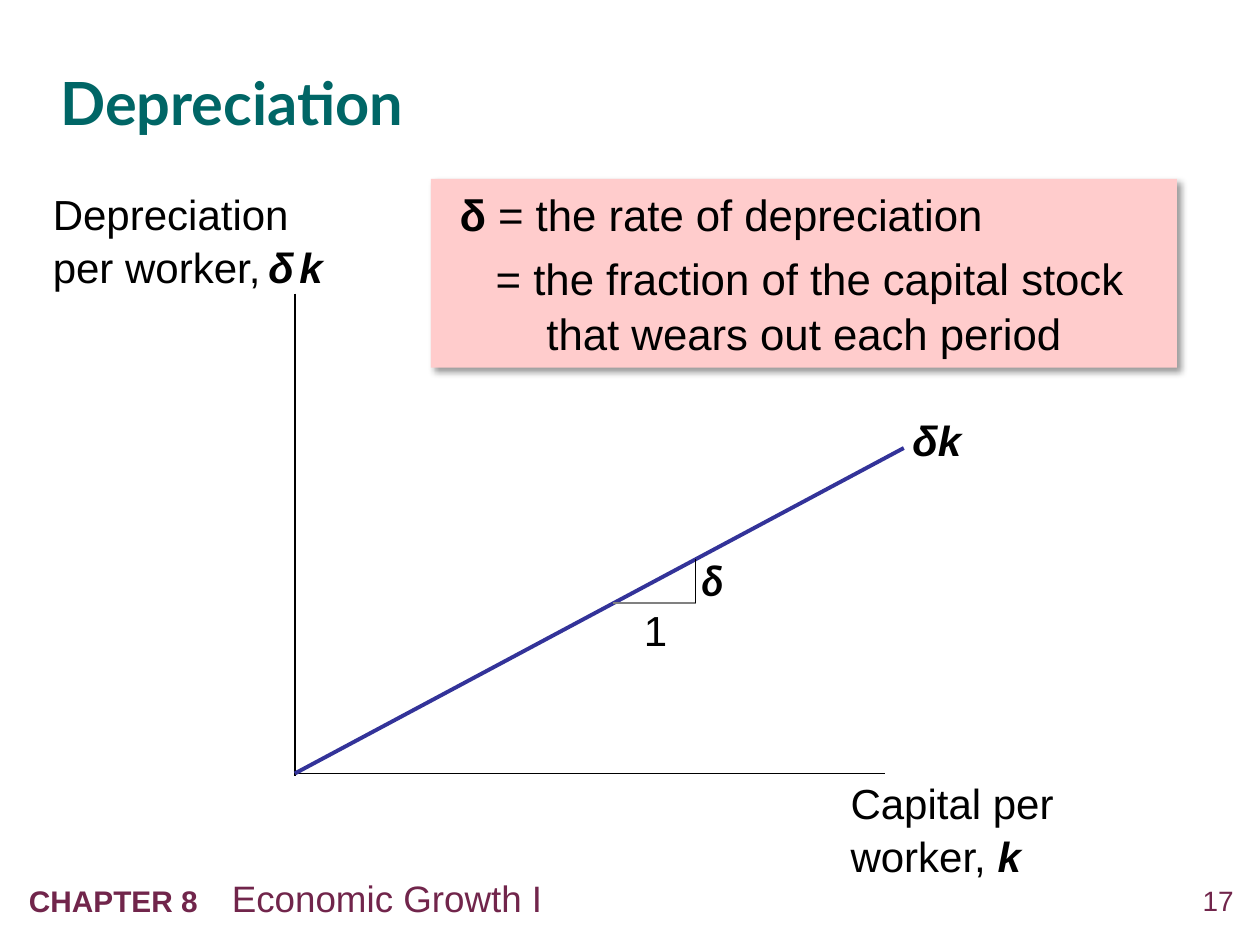
"""Build the slide on depreciation per worker as a line through the origin."""
import pptx
import pptx.util
import pptx.oxml
import pptx.oxml.ns
import pptx.dml.color
import pptx.enum.text
import pptx.enum.shapes

Pt = pptx.util.Pt
RGB = pptx.dml.color.RGBColor
ANCHOR = pptx.enum.text.MSO_ANCHOR
ALIGN = pptx.enum.text.PP_ALIGN
BLACK = RGB(0x00, 0x00, 0x00)
PLUM = RGB(0x71, 0x25, 0x4B)
TEAL = RGB(0x00, 0x66, 0x66)
BLUE = RGB(0x33, 0x33, 0x99)
GRAY = RGB(0x80, 0x80, 0x80)
PINK = RGB(0xFF, 0xCC, 0xCC)
SPACE = 'xmlns:a="http://schemas.openxmlformats.org/drawingml/2006/main"'
BOLD = {"bold": True}
SLANT = {"bold": True, "italic": True}


def write(para, runs, size, color=BLACK):
    for text, extra in runs:
        run = para.add_run()
        run.text = text
        run.font.color.rgb = color
        look = {"name": "Arial", "size": Pt(size), "bold": False, "italic": False}
        for key, value in {**look, **extra}.items():
            setattr(run.font, key, value)


def place(frame, anchor, inset=(0, 0)):
    side, edge = map(Pt, inset)
    look = {"word_wrap": True, "vertical_anchor": anchor, "margin_left": side,
            "margin_right": side, "margin_top": edge, "margin_bottom": edge}
    for key, value in look.items():
        setattr(frame, key, value)
    return frame.paragraphs[0]


deck = pptx.Presentation()
deck.slide_width, deck.slide_height = Pt(720), Pt(540)
slide = deck.slides.add_slide(deck.slide_layouts[5])
shapes = slide.shapes

title = shapes.title
for key, value in {"left": 34.5, "top": 24.5, "width": 643, "height": 65}.items():
    setattr(title, key, Pt(value))
para = place(title.text_frame, ANCHOR.MIDDLE)
para.alignment, para.line_spacing = ALIGN.LEFT, 1.05
write(para, [("Depreciation", {"name": "Lato", "bold": True})], 34, TEAL)

page = shapes.add_textbox(Pt(665.3), Pt(504.7), Pt(39.6), Pt(23))
para = place(page.text_frame, ANCHOR.TOP)
para.alignment = ALIGN.RIGHT
write(para, [("17", {})], 16, PLUM)

foot = shapes.add_textbox(Pt(9.4), Pt(496.8), Pt(589), Pt(32.4))
para = place(foot.text_frame, ANCHOR.TOP, (7.2, 3.6))
stop = f'<a:tabLst {SPACE}><a:tab pos="{Pt(116)}" algn="l"/></a:tabLst>'
para._p.get_or_add_pPr().append(pptx.oxml.parse_xml(stop))
write(para, [("CHAPTER 8\t", {"bold": True, "size": Pt(17)}),
             ("Economic Growth I", {})], 21, PLUM)

lines = [
    (168.5, 167.8, 168.5, 443.5, BLACK, 1),
    (169, 442, 505.5, 442, BLACK, 1),
    (168.5, 442, 516.5, 256, BLUE, 2.25),
    (350.5, 344.8, 397.5, 344.8, GRAY, 1),
    (397.5, 344.5, 397.5, 319.5, BLACK, 1),
]
for *ends, color, width in lines:
    line = shapes.add_connector(
        pptx.enum.shapes.MSO_CONNECTOR.STRAIGHT, *map(Pt, ends))
    line.line.color.rgb, line.line.width = color, Pt(width)
    line._element.spPr.append(pptx.oxml.parse_xml(f"<a:effectLst {SPACE}/>"))

labels = [
    (30.2, 107.3, 168.5, 58.3, [
        ("Depreciation per worker,", {}), (" ", {"size": Pt(16)}), ("δ", SLANT),
        (" ", {"size": Pt(11), **SLANT}), ("k", SLANT)]),
    (486, 444.2, 126, 57.6, [("Capital per worker, ", {}), ("k", SLANT)]),
    (521.3, 236.2, 77.8, 28.8, [("δk", SLANT)]),
    (368, 344.9, 23.8, 28.8, [("1", {})]),
    (401, 316.1, 24.5, 28.8, [("δ", {"name": "Lato", **SLANT})]),
]
for *spot, runs in labels:
    label = shapes.add_textbox(*map(Pt, spot))
    para = place(label.text_frame, ANCHOR.MIDDLE)
    para.line_spacing = 1.05
    write(para, runs, 24)

note = shapes.add_shape(pptx.enum.shapes.MSO_SHAPE.RECTANGLE,
                        Pt(246.2), Pt(102.2), Pt(426.3), Pt(108))
note.fill.solid()
note.fill.fore_color.rgb = PINK
note.line.fill.background()
note._element.spPr.append(pptx.oxml.parse_xml(
    f'<a:effectLst {SPACE}><a:outerShdw blurRad="{Pt(4)}" dist="{Pt(3)}" '
    'dir="2700000" algn="tl" rotWithShape="0"><a:srgbClr val="000000">'
    '<a:alpha val="40000"/></a:srgbClr></a:outerShdw></a:effectLst>'))
first = place(note.text_frame, ANCHOR.TOP, (7.2, 3.6))
facts = [
    (first, -49.7, [("δ", BOLD), (" = the rate of depreciation", {})]),
    (note.text_frame.add_paragraph(), -29,
     [("= the fraction of the capital stock that wears out each period", {})]),
]
for para, indent, runs in facts:
    para.alignment, para.line_spacing = ALIGN.LEFT, 1.05
    para.space_before = Pt(0 if para is first else 5)
    props = para._p.get_or_add_pPr()
    props.set("marL", str(Pt(59)))
    props.set("indent", str(Pt(indent)))
    write(para, runs, 25)

deck.save("out.pptx")
